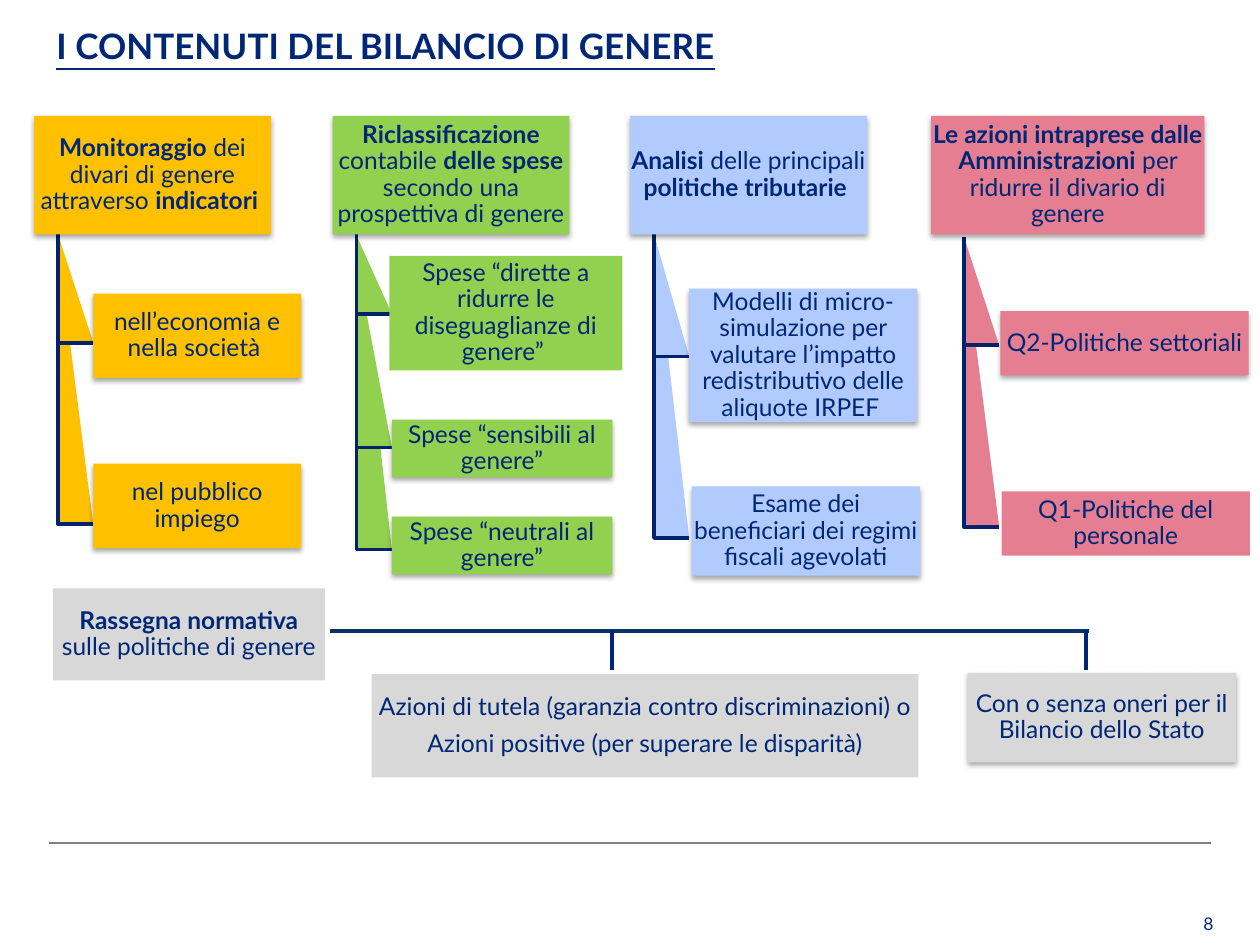
from lxml import etree
from pptx import Presentation
from pptx.dml.color import RGBColor
from pptx.enum.shapes import MSO_CONNECTOR, MSO_SHAPE
from pptx.enum.text import MSO_ANCHOR, PP_ALIGN
from pptx.oxml import parse_xml
from pptx.oxml.ns import nsdecls, qn
from pptx.util import Pt

PX = 9144  # 100 px to the inch
FONT = "Lato"
COLORS = {
    "text": "002776", "elbow": "00236B", "bar": "0B3066", "footer": "808080",
    "orange": "FFC000", "green": "92D050", "blue": "B1CBFF",
    "pink": "E57E90", "gray": "D8D8D8",
}
COLORS = {name: RGBColor.from_string(value) for name, value in COLORS.items()}
SHADOW = (
    f'<a:effectLst {nsdecls("a")}><a:outerShdw blurRad="39370" dist="22860" dir="5400000" '
    'rotWithShape="0"><a:srgbClr val="000000"><a:alpha val="35000"/></a:srgbClr>'
    '</a:outerShdw></a:effectLst>'
)

presentation = Presentation()
presentation.slide_width = 1000 * PX
presentation.slide_height = 750 * PX
slide = presentation.slides.add_slide(presentation.slide_layouts[6])
shapes = slide.shapes


def write(shape, paragraphs, size, alignment):
    """Fill a shape with paragraphs; every second piece between ** is bold."""
    text_frame = shape.text_frame
    text_frame.word_wrap = True
    text_frame.vertical_anchor = MSO_ANCHOR.MIDDLE
    for index, content in enumerate(paragraphs):
        paragraph = text_frame.paragraphs[0] if index == 0 else text_frame.add_paragraph()
        paragraph.alignment = alignment
        for position, piece in enumerate(content.split("**")):
            if piece:
                run = paragraph.add_run()
                run.text = piece
                run.font.name = FONT
                run.font.size = Pt(size)
                run.font.bold = position % 2 == 1
                run.font.color.rgb = COLORS["text"]


def add_line(start_x, start_y, end_x, end_y, color, width):
    line = shapes.add_connector(
        MSO_CONNECTOR.STRAIGHT, start_x * PX, start_y * PX, end_x * PX, end_y * PX)
    line.line.color.rgb = COLORS[color]
    line.line.width = Pt(width)
    etree.SubElement(line._element.spPr, qn("a:effectLst"))


# Footer rule
add_line(39, 669, 961, 669, "footer", 0.75)

# Filled elbows: color, line width, stem x, (top, bottom) of each
ELBOWS = [
    ("orange", 2.25, 46, [(197, 416), (186, 272)]),
    ("green", 2, 283, [(186, 436), (207, 355), (187, 249)]),
    ("blue", 2, 519, [(186, 427), (186, 283)]),
    ("pink", 2.25, 765, [(199, 418), (188, 274)]),
]
for color, width, stem, spans in ELBOWS:
    for top, bottom in spans:
        builder = shapes.build_freeform(stem, top, scale=PX)
        builder.add_line_segments([(stem, bottom), (stem + 28, bottom)], close=False)
        elbow = builder.convert_to_shape()
        elbow.shadow.inherit = False
        elbow.fill.solid()
        elbow.fill.fore_color.rgb = COLORS[color]
        elbow.line.color.rgb = COLORS["elbow"]
        elbow.line.width = Pt(width)

# Boxes: color, left, top, width, height, shadow, paragraphs
BOXES = [
    ("orange", 27, 92, 188, 94, True,
     ["**Monitoraggio** dei divari di genere attraverso **indicatori **"]),
    ("orange", 74, 233, 165, 67, True, ["nell’economia e nella società "]),
    ("orange", 74, 368, 165, 67, True, ["nel pubblico impiego"]),
    ("green", 264, 92, 188, 94, True,
     ["**Riclassificazione** contabile **delle spese **secondo una prospettiva di genere"]),
    ("green", 309, 203, 185, 91, False,
     ["Spese “dirette a ridurre le diseguaglianze di genere” "]),
    ("green", 311, 333, 175, 46, True, ["Spese “sensibili al genere”"]),
    ("green", 311, 410, 175, 46, True, ["Spese “neutrali al genere”"]),
    ("blue", 500, 92, 188, 94, True,
     ["**Analisi** delle principali **politiche tributarie **"]),
    ("blue", 547, 229, 181, 106, True,
     ["Modelli di micro-simulazione per valutare l’impatto redistributivo delle aliquote IRPEF "]),
    ("blue", 549, 386, 181, 71, True,
     ["Esame dei beneficiari dei regimi fiscali agevolati"]),
    ("pink", 739, 92, 217, 94, True,
     ["**Le azioni intraprese dalle Amministrazioni** per ridurre il divario di genere"]),
    ("pink", 794, 247, 197, 51, True, ["Q2-Politiche settoriali"]),
    ("pink", 795, 390, 197, 51, False, ["Q1-Politiche del personale"]),
    ("gray", 42, 467, 216, 73, False,
     ["**Rassegna normativa** sulle politiche di genere"]),
    ("gray", 295, 535, 434, 82, False,
     ["Azioni di tutela (garanzia contro discriminazioni) o",
      "Azioni positive (per superare le disparità)"]),
    ("gray", 768, 534, 213, 71, True, ["Con o senza oneri per il Bilancio dello Stato"]),
]
for color, left, top, width, height, has_shadow, paragraphs in BOXES:
    box = shapes.add_shape(
        MSO_SHAPE.RECTANGLE, left * PX, top * PX, width * PX, height * PX)
    box.fill.solid()
    box.fill.fore_color.rgb = COLORS[color]
    box.line.fill.background()
    if has_shadow:
        box._element.spPr.append(parse_xml(SHADOW))
    else:
        box.shadow.inherit = False
    text_frame = box.text_frame
    text_frame.margin_left = text_frame.margin_right = PX
    text_frame.margin_top = text_frame.margin_bottom = PX
    write(box, paragraphs, 14, PP_ALIGN.CENTER)
    for paragraph in text_frame.paragraphs:
        paragraph.line_spacing = 0.9
        paragraph.space_after = Pt(5.9)

# Bar and drops from the regulatory review
add_line(262, 501, 864, 501, "bar", 2.25)
for drop in (486, 862):
    add_line(drop, 501, drop, 532, "text", 2.25)

# Title and page number
title = shapes.add_textbox(35 * PX, 13 * PX, 917 * PX, 47 * PX)
write(title, ["**I CONTENUTI DEL BILANCIO DI GENERE**"], 20, PP_ALIGN.JUSTIFY)
title.text_frame.paragraphs[0].runs[0].font.underline = True
page_number = shapes.add_textbox(662 * PX, 723 * PX, 311 * PX, 20 * PX)
write(page_number, ["8"], 10, PP_ALIGN.RIGHT)

presentation.save("out.pptx")
